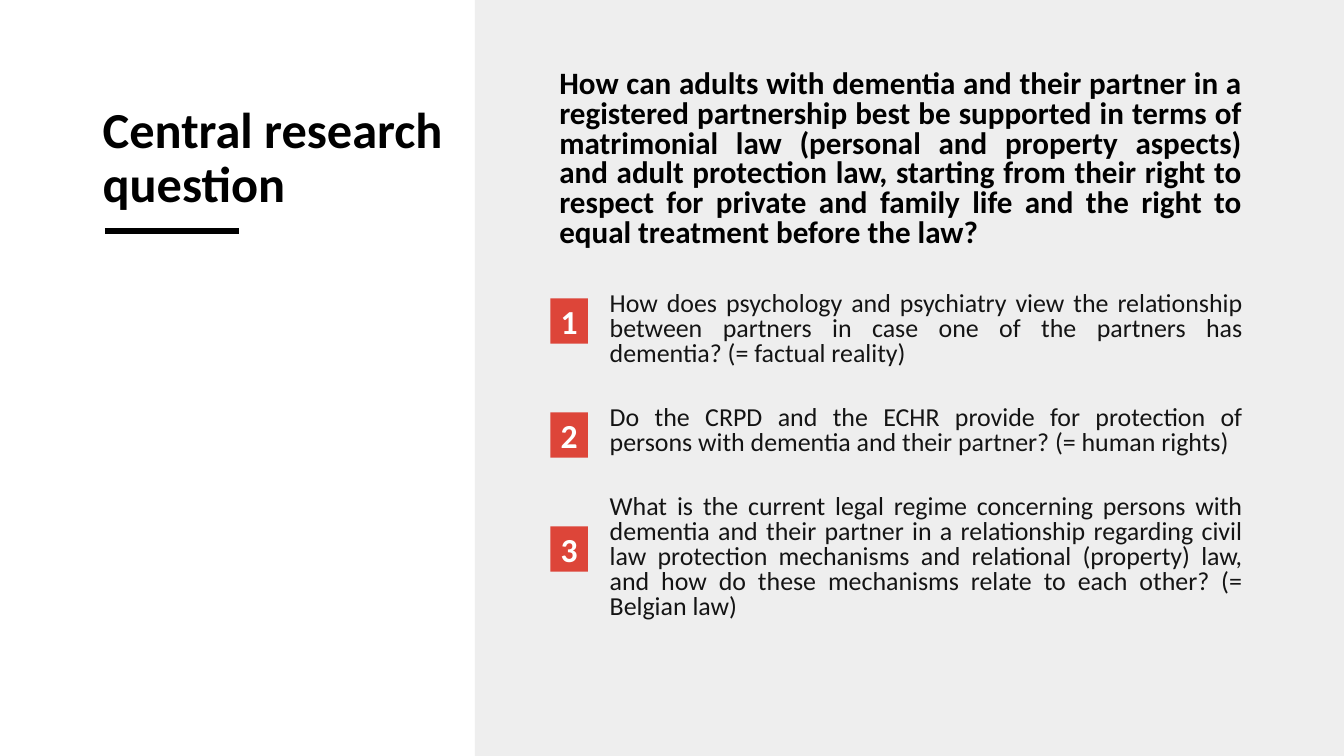
from dataclasses import dataclass

import lxml.etree
import pptx
import pptx.dml.color
import pptx.enum.shapes
import pptx.enum.text
import pptx.oxml.ns
import pptx.util

WIDTH, HEIGHT = pptx.util.Inches(13.33), pptx.util.Inches(7.5)
COLUMNS = ROWS = 100
FONT = "Calibri"
COLOURS = {"black": "000000", "body": "141414", "white": "FFFFFF",
           "panel": "D9D9D9", "badge": "DD4539"}
ALIGN = pptx.enum.text.PP_ALIGN
ANCHOR = pptx.enum.text.MSO_ANCHOR


@dataclass
class Area:
    """Place on the slide, in grid columns and rows."""
    left: float
    top: float
    width: float
    height: float

    def lengths(self) -> tuple[int, int, int, int]:
        return (column(self.left), row(self.top),
                column(self.width), row(self.height))


@dataclass
class Passage:
    text: str
    size: float
    colour: str = "black"
    bold: bool = True
    align: ALIGN = ALIGN.LEFT
    line_spacing: float = 1.0
    space_before: float = 0
    indent: float = 0


def column(count: float) -> int:
    return round(WIDTH * count / COLUMNS)


def row(count: float) -> int:
    return round(HEIGHT * count / ROWS)


def rgb(name: str) -> pptx.dml.color.RGBColor:
    return pptx.dml.color.RGBColor.from_string(COLOURS[name])


def write(shape, passages: list[Passage], anchor: ANCHOR) -> None:
    frame = shape.text_frame
    frame.word_wrap = True
    frame.vertical_anchor = anchor
    frame.text = "\n".join(passage.text for passage in passages)
    for para, passage in zip(frame.paragraphs, passages):
        para.alignment = passage.align
        para.line_spacing = passage.line_spacing
        para.space_before = pptx.util.Pt(passage.space_before)
        if passage.indent:
            properties = para._p.get_or_add_pPr()
            properties.set("marL", str(pptx.util.Inches(passage.indent)))
            properties.set("indent", "0")
        for span in para.runs:
            span.font.name = FONT
            span.font.size = pptx.util.Pt(passage.size)
            span.font.bold = passage.bold
            span.font.color.rgb = rgb(passage.colour)


def add_text(page, area: Area, passages: list[Passage], anchor: ANCHOR) -> None:
    write(page.shapes.add_textbox(*area.lengths()), passages, anchor)


def add_block(page, area: Area, colour: str):
    block = page.shapes.add_shape(
        pptx.enum.shapes.MSO_SHAPE.RECTANGLE, *area.lengths())
    block.shadow.inherit = False
    block.fill.solid()
    block.fill.fore_color.rgb = rgb(colour)
    block.line.fill.background()
    return block


def add_panel(page) -> None:
    """Half-transparent grey panel on the right."""
    left = 35.33
    panel = add_block(page, Area(left, 0, COLUMNS - left, ROWS), "panel")
    colour = panel._element.spPr.find(".//" + pptx.oxml.ns.qn("a:srgbClr"))
    lxml.etree.SubElement(colour, pptx.oxml.ns.qn("a:alpha"), val="44000")


def add_title_rule(page) -> None:
    rule = page.shapes.add_connector(
        pptx.enum.shapes.MSO_CONNECTOR.STRAIGHT,
        column(7.8), row(30.53), column(17.78), row(30.53))
    rule.line.color.rgb = rgb("black")
    rule.line.width = pptx.util.Pt(4.5)
    lxml.etree.SubElement(rule._element.spPr, pptx.oxml.ns.qn("a:effectLst"))


def add_badge(page, number: int) -> None:
    area = Area(40.96, 39.47 + 15.07 * (number - 1), 2.78, 6)
    badge = add_block(page, area, "badge")
    frame = badge.text_frame
    frame.margin_left = frame.margin_right = 0
    frame.margin_top = frame.margin_bottom = 0
    label = Passage(str(number), 24, "white", align=ALIGN.CENTER)
    write(badge, [label], ANCHOR.MIDDLE)


QUESTION = (
    "How can adults with dementia and their partner in a registered "
    "partnership best be supported in terms of matrimonial law (personal and "
    "property aspects) and adult protection law, starting from their right to "
    "respect for private and family life and the right to equal treatment "
    "before the law?")
SUBQUESTIONS = [
    "How does psychology and psychiatry view the relationship between "
    "partners in case one of the partners has dementia? (= factual reality)",
    "Do the CRPD and the ECHR provide for protection of persons with dementia "
    "and their partner? (= human rights)",
    "What is the current legal regime concerning persons with dementia and "
    "their partner in a relationship regarding civil law protection "
    "mechanisms and relational (property) law, and how do these mechanisms "
    "relate to each other? (= Belgian law)",
]


def main() -> None:
    deck = pptx.Presentation()
    deck.slide_width, deck.slide_height = WIDTH, HEIGHT
    page = deck.slides.add_slide(deck.slide_layouts[6])

    add_panel(page)
    add_title_rule(page)
    title = Passage("Central research question", 36, line_spacing=0.9)
    add_text(page, Area(6.9, 8.67, 27.08, 20.27), [title], ANCHOR.BOTTOM)

    passages = [Passage(QUESTION, 22.2, align=ALIGN.JUSTIFY, line_spacing=0.8)]
    for index, text in enumerate(SUBQUESTIONS):
        passages.append(Passage(
            text, 18.5, "body", bold=False, align=ALIGN.JUSTIFY,
            line_spacing=0.8, space_before=28 if index else 31, indent=0.5))
    add_text(page, Area(40.88, 8.67, 52.29, 80.8), passages, ANCHOR.TOP)

    for number in range(1, len(SUBQUESTIONS) + 1):
        add_badge(page, number)
    deck.save("out.pptx")


if __name__ == "__main__":
    main()
